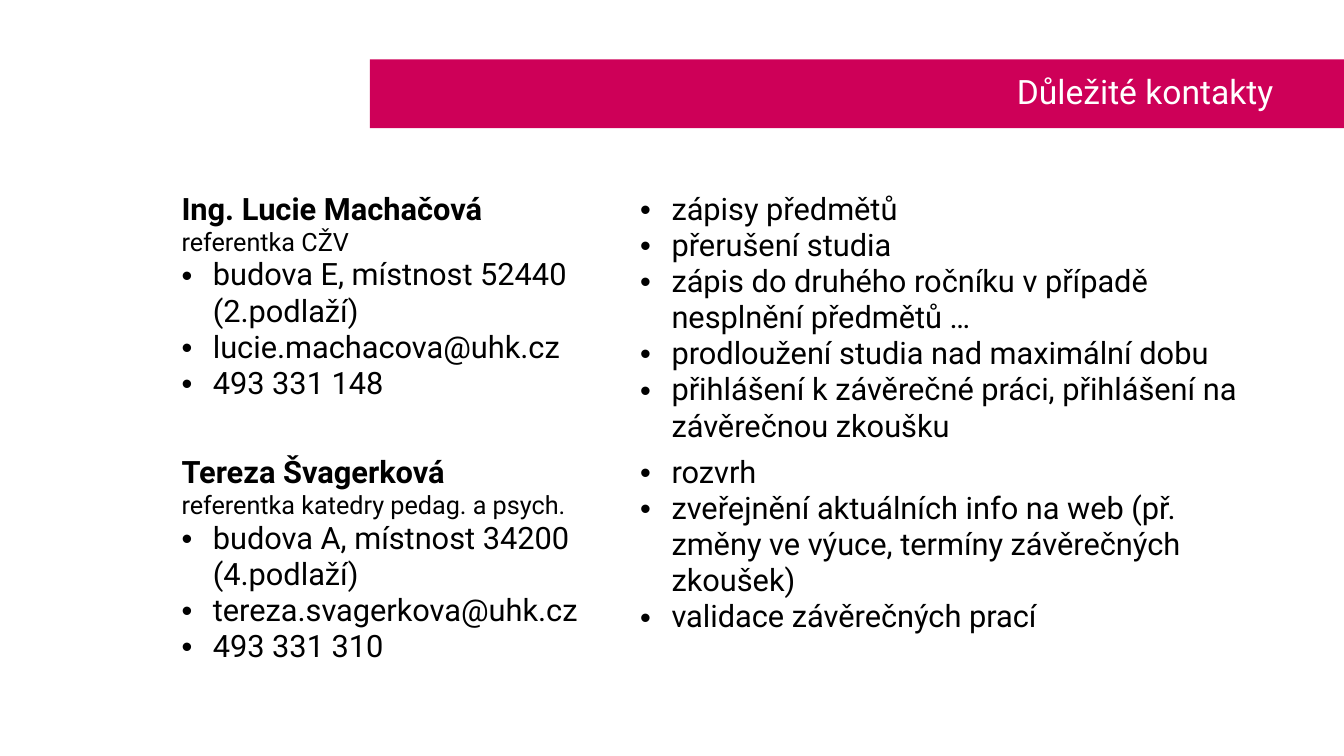
from lxml import etree
from pptx import Presentation
from pptx import util as u
from pptx.dml.color import RGBColor
from pptx.enum import shapes, text
from pptx.oxml.ns import qn

CRIMSON = RGBColor(0xCE, 0x00, 0x58)
WHITE = RGBColor(0xFF, 0xFF, 0xFF)
BLACK = RGBColor(0x00, 0x00, 0x00)

FONT = "Roboto"
INDENT = u.Cm(0.79)
NAME = {"size": u.Pt(22), "bold": True}
ROLE = {"size": u.Pt(18), "bold": False}
ITEM = {"size": u.Pt(22), "bold": False}

# Each contact: name, role, contact details, agenda
CONTACTS = [
    ("Ing. Lucie Machačová", "referentka CŽV",
     ["budova E, místnost 52440 (2.podlaží)", "lucie.machacova@uhk.cz", "493 331 148"],
     ["zápisy předmětů", "přerušení studia",
      "zápis do druhého ročníku v případě nesplnění předmětů …",
      "prodloužení studia nad maximální dobu",
      "přihlášení k závěrečné práci, přihlášení na závěrečnou zkoušku"]),
    ("Tereza Švagerková", "referentka katedry pedag. a psych.",
     ["budova A, místnost 34200 (4.podlaží)", "tereza.svagerkova@uhk.cz", "493 331 310"],
     ["rozvrh",
      "zveřejnění aktuálních info na web (př. změny ve výuce, termíny závěrečných zkoušek)",
      "validace závěrečných prací"]),
]


def add_span(para, words, style, color):
    span = para.add_run()
    span.text = words
    for key, value in {"name": FONT, **style}.items():
        setattr(span.font, key, value)
    span.font.color.rgb = color


def add_bullet(para):
    props = para._p.get_or_add_pPr()
    props.set("marL", str(INDENT))
    props.set("indent", str(-INDENT))
    etree.SubElement(props, qn("a:buFont")).set("typeface", "Arial")
    etree.SubElement(props, qn("a:buChar")).set("char", "•")


def fill_cell(cell, lines):
    cell.fill.solid()
    cell.fill.fore_color.rgb = WHITE
    for index, (words, style) in enumerate(lines):
        para = cell.text_frame.add_paragraph() if index else cell.text_frame.paragraphs[0]
        if style is ITEM:
            add_bullet(para)
        add_span(para, words, style, BLACK)


def add_title_bar(page, words):
    bar = page.shapes.add_shape(shapes.MSO_SHAPE.RECTANGLE,
                                u.Cm(9.32), u.Cm(1.5), u.Cm(24.55), u.Cm(1.73))
    bar.shadow.inherit = False
    bar.fill.solid()
    bar.fill.fore_color.rgb = CRIMSON
    bar.line.fill.background()
    frame = bar.text_frame
    layout = {"word_wrap": True, "vertical_anchor": text.MSO_ANCHOR.MIDDLE,
              "margin_left": u.Cm(1.5), "margin_right": u.Cm(1.78)}
    for key, value in layout.items():
        setattr(frame, key, value)
    para = frame.paragraphs[0]
    para.alignment = text.PP_ALIGN.RIGHT
    para.line_spacing = 0.9
    add_span(para, words, {"size": u.Pt(24)}, WHITE)


def add_contact_table(page, contacts):
    widths, heights = (u.Cm(11.56), u.Cm(16.2)), (u.Cm(6.2), u.Cm(6.68))
    table = page.shapes.add_table(len(contacts), 2, u.Cm(4.32), u.Cm(4.7),
                                  sum(widths), sum(heights)).table
    table.first_row = table.horz_banding = False
    for column, width in zip(table.columns, widths):
        column.width = width
    for index, (name, role, details, agenda) in enumerate(contacts):
        table.rows[index].height = heights[index]
        person = [(name, NAME), (role, ROLE)] + [(item, ITEM) for item in details]
        fill_cell(table.cell(index, 0), person)
        fill_cell(table.cell(index, 1), [(item, ITEM) for item in agenda])


def main():
    deck = Presentation()
    deck.slide_width, deck.slide_height = u.Cm(33.87), u.Cm(19.05)
    page = deck.slides.add_slide(deck.slide_layouts[6])
    add_contact_table(page, CONTACTS)
    add_title_bar(page, "Důležité kontakty")
    deck.save("out.pptx")


if __name__ == "__main__":
    main()
